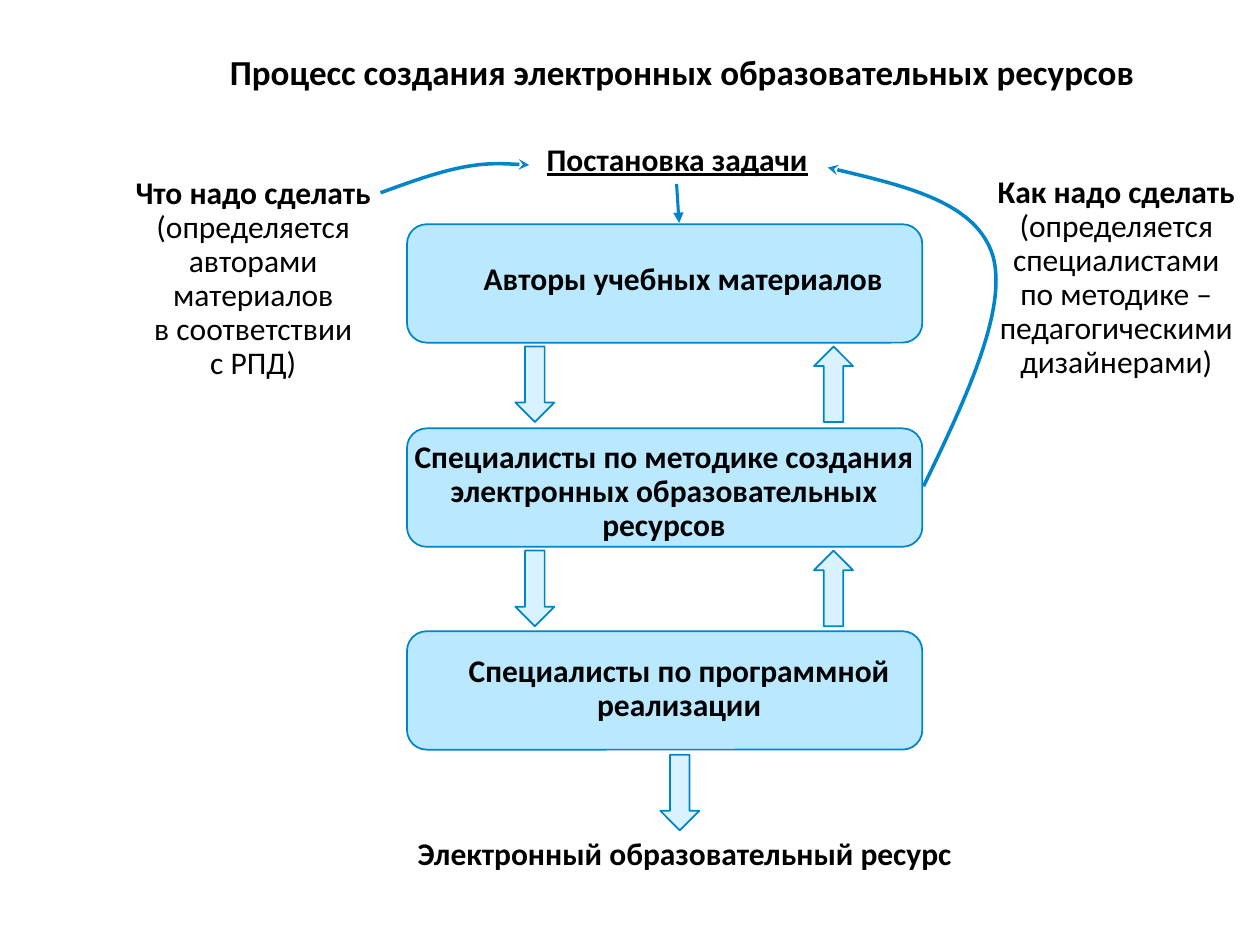
from lxml import etree
from pptx import Presentation
from pptx import util as u
from pptx.dml.color import RGBColor
from pptx.enum import shapes, text
from pptx.oxml.ns import qn

PX = 9144  # 100 px to the inch
FONT = "Calibri"
HEX = {"box": "66CCFF", "arrow": "D9F2FF", "line": "0085C8", "text": "000000"}
KIND = shapes.MSO_SHAPE


def px(*nums):
    return [u.Emu(n * PX) for n in nums]


def color(name):
    return RGBColor.from_string(HEX[name])


def stroke(shape, width, head=None):
    shape.line.color.rgb = color("line")
    shape.line.width = u.Pt(width)
    if head:
        ln = shape.line._get_or_add_ln()
        etree.SubElement(ln, qn("a:tailEnd"), type=head)


def block(slide, kind, box, fill, alpha=100):
    """Add a filled preset shape; alpha is its opacity in percent."""
    shape = slide.shapes.add_shape(kind, *px(*box))
    shape.shadow.inherit = False
    shape.fill.solid()
    shape.fill.fore_color.rgb = color(fill)
    if alpha < 100:
        rgb = shape._element.spPr.find(".//" + qn("a:srgbClr"))
        etree.SubElement(rgb, qn("a:alpha"), val=str(alpha * 1000))
    stroke(shape, 1)
    return shape


def label(slide, box, lines, size=18, gap=None, bold=None,
          align=text.PP_ALIGN.CENTER, under=None):
    """Add a text box; bold counts the leading bold lines, None means all."""
    frame = slide.shapes.add_textbox(*px(*box)).text_frame
    frame.word_wrap = True
    for i, line in enumerate(lines):
        para = frame.paragraphs[0] if i == 0 else frame.add_paragraph()
        para.text = line
        para.alignment = align
        para.line_spacing = gap
        font = para.font
        font.name, font.size = FONT, u.Pt(size)
        font.bold = bold is None or i < bold
        font.underline = under
        font.color.rgb = color("text")


def curve(slide, start, points):
    """Draw cubic curves: each three points are two controls and an end."""
    form = slide.shapes.build_freeform(*start, scale=PX)
    form.add_line_segments(points, close=False)
    shape = form.convert_to_shape()
    shape.shadow.inherit = False
    shape.fill.background()
    stroke(shape, 2, "stealth")
    track = shape._element.find(".//" + qn("a:path"))
    steps = track.findall(qn("a:lnTo"))
    for i in range(0, len(steps), 3):
        bend = etree.SubElement(track, qn("a:cubicBezTo"))
        for step in steps[i:i + 3]:
            bend.append(step[0])
            track.remove(step)


def arrow(slide, start, end):
    line = slide.shapes.add_connector(
        shapes.MSO_CONNECTOR.STRAIGHT, *px(*start, *end))
    stroke(line, 1.75, "triangle")
    etree.SubElement(line._element.spPr, qn("a:effectLst"))


def main():
    prs = Presentation()
    prs.slide_width, prs.slide_height = px(1000, 750)
    slide = prs.slides.add_slide(prs.slide_layouts[6])

    for top in (178, 340, 501):
        block(slide, KIND.ROUNDED_RECTANGLE, (323, top, 409, 94), "box", 45)
    for left, top, turn in ((409, 275, 0), (409, 437, 0), (646, 275, 180),
                            (646, 437, 180), (524, 599, 0)):
        shape = block(slide, KIND.DOWN_ARROW, (left, top, 31, 60), "arrow")
        shape.rotation = turn

    label(slide, (83, 35, 917, 44),
          ["Процесс создания электронных образовательных ресурсов"], size=20)
    label(slide, (378, 106, 319, 40), ["Постановка задачи"], under=True)
    label(slide, (374, 201, 378, 40), ["Авторы учебных материалов"],
          align=text.PP_ALIGN.LEFT)
    label(slide, (291, 345, 472, 92),
          ["Специалисты по методике создания электронных образовательных",
           "ресурсов"], gap=0.9)
    label(slide, (303, 515, 472, 65),
          ["Специалисты по программной реализации"], gap=0.9)
    label(slide, (321, 657, 445, 40), ["Электронный образовательный ресурс"])
    label(slide, (83, 136, 236, 174),
          ["Что надо сделать", "(определяется авторами материалов",
           "в соответствии", "с РПД)"], gap=0.9, bold=1)
    label(slide, (768, 135, 236, 174),
          ["Как надо сделать", "(определяется", "специалистами",
           "по методике – педагогическими дизайнерами)"], gap=0.9, bold=1)

    curve(slide, (733, 386), [(767, 316), (800, 245), (788, 203),
                              (775, 161), (716, 147), (657, 133)])
    curve(slide, (302, 153), [(324, 145), (346, 137), (366, 133),
                              (386, 129), (403, 130), (420, 131)])
    arrow(slide, (537, 146), (539, 177))

    prs.save("out.pptx")


if __name__ == "__main__":
    main()
